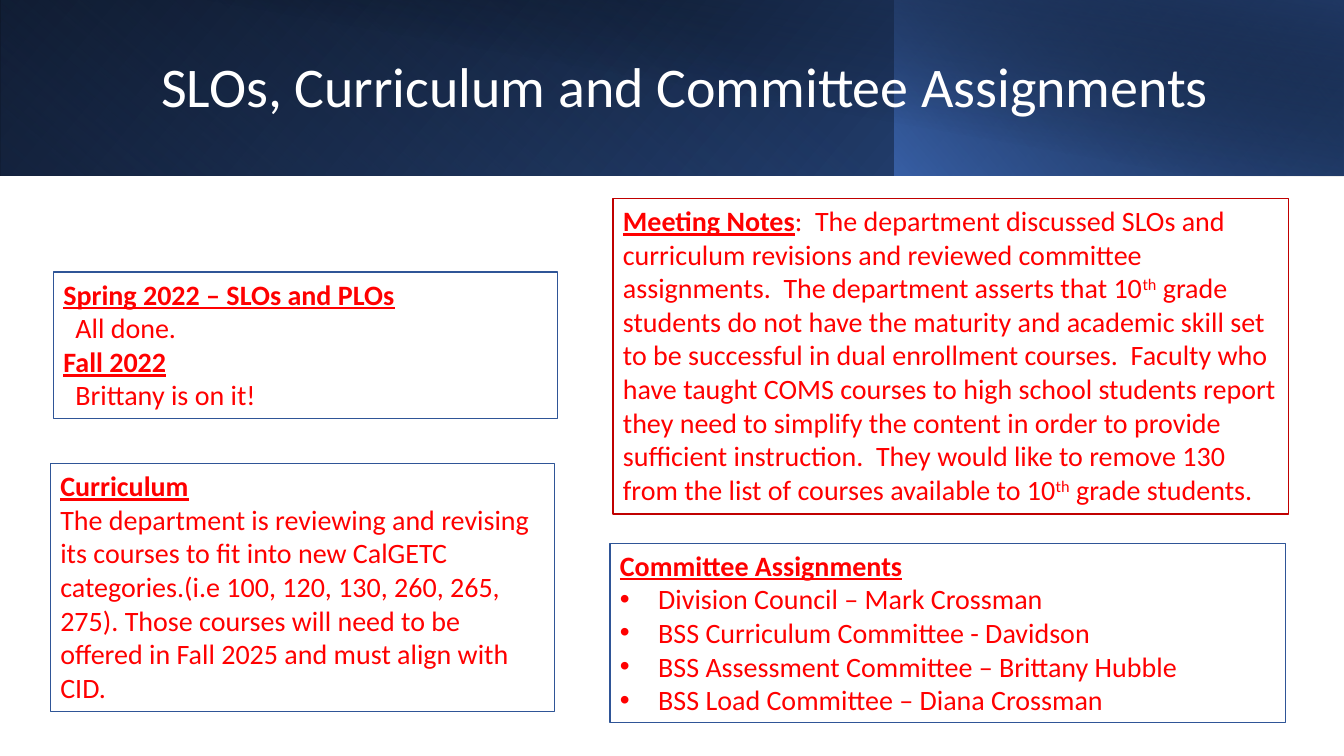
from lxml import etree
from pptx import Presentation
from pptx.dml.color import RGBColor as RGB
from pptx.enum.shapes import MSO_SHAPE as Shape
from pptx.enum.text import MSO_ANCHOR as Anchor, MSO_AUTO_SIZE as Fit, PP_ALIGN as Align
from pptx.oxml import parse_xml
from pptx.oxml.ns import nsdecls, qn
from pptx.util import Pt

PX = 9144  # 100 px to the inch
FONT = "Calibri"
COL = {"white": "FFFFFF", "black": "000000", "red": "FF0000", "crimson": "C00000",
       "blue": "2F5597", "sky": "4472C4", "navy": "203864"}

deck = Presentation()
deck.slide_width, deck.slide_height = 1333 * PX, 750 * PX
slide = deck.slides.add_slide(deck.slide_layouts[6])


def add_rect(box):
    rect = slide.shapes.add_shape(Shape.RECTANGLE, *[n * PX for n in box])
    rect.shadow.inherit = False
    rect.fill.background()
    rect.line.fill.background()
    return rect


def style(run, size, color):
    run.font.name, run.font.size = FONT, Pt(size)
    run.font.color.rgb = RGB.from_string(COL[color])


# Banner: box, flip, turn, angle, stops of (place, colour, opacity)
bands = [
    ((0, 0, 1333, 174), True, 0, 140, [(0, "black", 100), (100, "blue", 100)]),
    ((0, 0, 888, 174), True, 180, 230, [(20, "sky", 0), (100, "navy", 55)]),
    ((887, 0, 446, 174), True, 0, 220, [(0, "sky", 66), (100, "black", 30)]),
    ((50, 0, 1283, 175), False, 0, 280, [(50, "black", 0), (99, "navy", 52)]),
]
for box, flip, turn, angle, stops in bands:
    band = add_rect(box)
    band.rotation = turn
    props = band._element.spPr
    if flip:
        props.find(qn("a:xfrm")).set("flipH", "1")
    marks = "".join(
        f'<a:gs pos="{place * 1000}"><a:srgbClr val="{COL[color]}">'
        f'<a:alpha val="{alpha * 1000}"/></a:srgbClr></a:gs>'
        for place, color, alpha in stops)
    grad = parse_xml(
        f'<a:gradFill {nsdecls("a")} rotWithShape="1"><a:gsLst>{marks}</a:gsLst>'
        f'<a:lin ang="{angle * 60000}" scaled="0"/></a:gradFill>')
    props.replace(props.find(qn("a:noFill")), grad)

# Title
title = slide.shapes.add_textbox(*[n * PX for n in (150, 32, 1082, 113)])
frame = title.text_frame
frame.word_wrap, frame.vertical_anchor = True, Anchor.MIDDLE
frame.text = "SLOs, Curriculum and Committee Assignments"
frame.paragraphs[0].line_spacing = 0.9
style(frame.paragraphs[0].runs[0], 40, "white")

# Cards: box, fill, line colour, line width, paragraphs of (kind, runs)
# A run that starts with * is a heading, one that starts with ^ is raised
cards = [
    ((53, 270, 500, 145), None, "blue", 1, [
        ("plain", ["*Spring 2022 – SLOs and PLOs"]),
        ("inset", ["All done."]),
        ("plain", ["*Fall 2022"]),
        ("inset", ["Brittany is on it!"])]),
    ((50, 460, 500, 246), None, "blue", 1, [
        ("plain", ["*Curriculum"]),
        ("plain", ["The department is reviewing and revising its courses to fit into new "
                   "CalGETC categories.(i.e 100, 120, 130, 260, 265, 275). Those courses "
                   "will need to be offered in Fall 2025 and must align with CID."])]),
    ((605, 539, 670, 178), None, "blue", 1, [
        ("plain", ["*Committee Assignments"]),
        ("bullet", ["Division Council – Mark Crossman"]),
        ("bullet", ["BSS Curriculum Committee - Davidson"]),
        ("bullet", ["BSS Assessment Committee – Brittany Hubble"]),
        ("bullet", ["BSS Load Committee – Diana Crossman"])]),
    ((608, 197, 670, 313), "white", "crimson", 1.25, [
        ("plain", [
            "*Meeting Notes",
            ":  The department discussed SLOs and curriculum revisions and reviewed "
            "committee assignments.  The department asserts that 10",
            "^th",
            " grade students do not have the maturity and academic skill set to be "
            "successful in dual enrollment courses.  Faculty who have taught COMS courses "
            "to high school students report they need to simplify the content in order to "
            "provide sufficient instruction.  They would like to remove 130 from the list "
            "of courses available to 10",
            "^th",
            " grade students."])]),
]
for box, fill, edge, width, paras in cards:
    card = add_rect(box)
    if fill:
        card.fill.solid()
        card.fill.fore_color.rgb = RGB.from_string(COL[fill])
    card.line.color.rgb = RGB.from_string(COL[edge])
    card.line.width = Pt(width)
    frame = card.text_frame
    frame.word_wrap, frame.vertical_anchor = True, Anchor.TOP
    frame.auto_size = Fit.SHAPE_TO_FIT_TEXT
    for i, (kind, parts) in enumerate(paras):
        para = frame.add_paragraph() if i else frame.paragraphs[0]
        para.alignment = Align.LEFT
        props = para._p.get_or_add_pPr()
        if kind == "inset":
            props.set("marL", str(12 * PX))
        elif kind == "bullet":
            props.set("marL", str(38 * PX))
            props.set("indent", str(-38 * PX))
            etree.SubElement(props, qn("a:buFont")).set("typeface", "Arial")
            etree.SubElement(props, qn("a:buChar")).set("char", "•")
        for part in parts:
            run = para.add_run()
            run.text = part.lstrip("*^")
            style(run, 20, "red")
            if part[0] == "*":
                run.font.bold = run.font.underline = True
            elif part[0] == "^":
                run._r.get_or_add_rPr().set("baseline", "30000")

deck.save("out.pptx")
